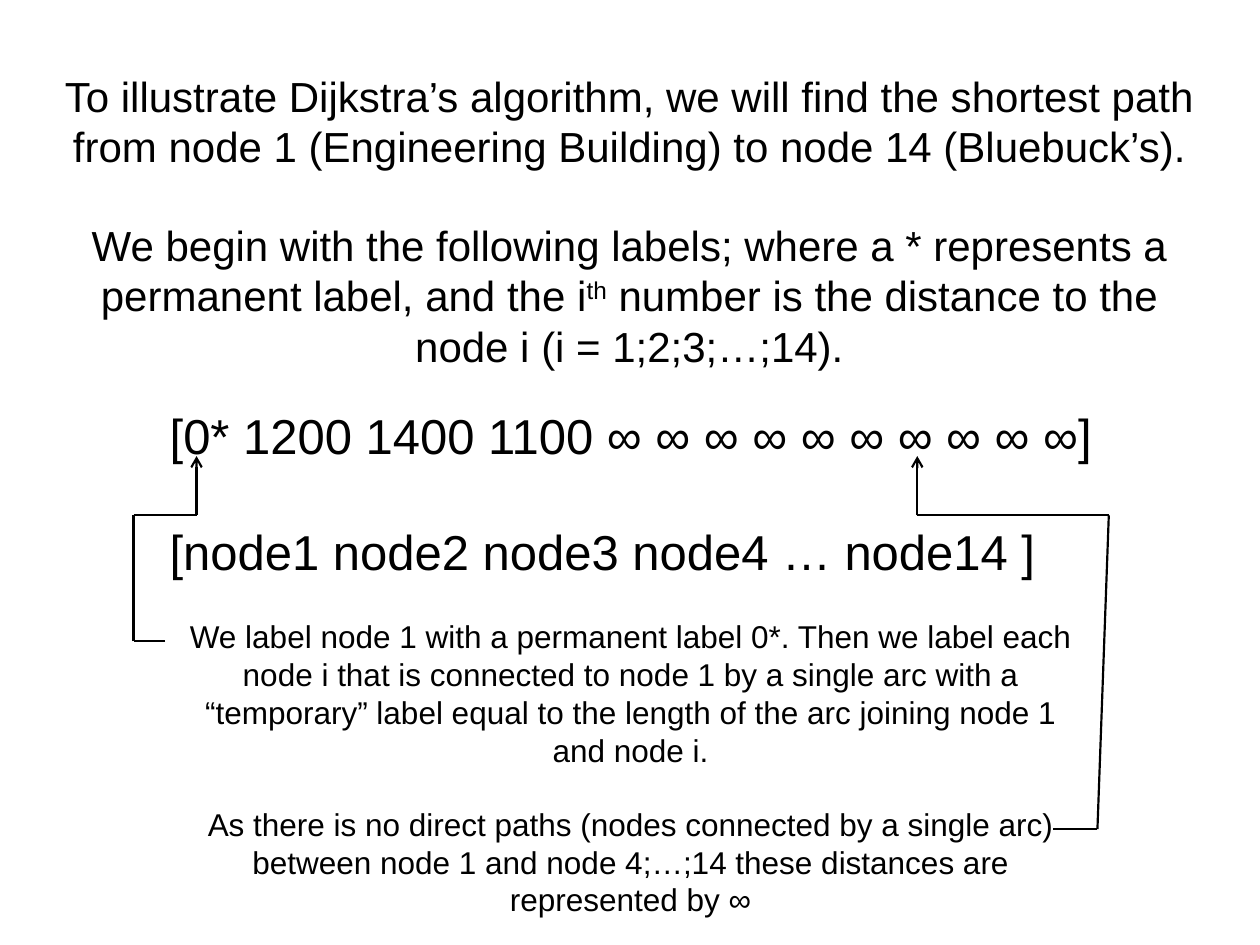
from dataclasses import dataclass
from itertools import pairwise

from lxml.etree import SubElement
from pptx import Presentation
from pptx.dml.color import RGBColor
from pptx.enum.shapes import MSO_CONNECTOR as Connector
from pptx.enum.text import MSO_AUTO_SIZE as AutoSize, PP_ALIGN as Align
from pptx.oxml.ns import qn
from pptx.util import Inches, Pt


@dataclass(frozen=True)
class Theme:
    font: str = "Arial"
    ink: RGBColor = RGBColor(0, 0, 0)
    intro: int = 24
    labels: int = 28
    notes: int = 18
    line_height: float = 1.15
    stroke: float = 1.25


THEME = Theme()
BLANK_LAYOUT = 6

INTRO = [
    "To illustrate Dijkstra’s algorithm, we will find the shortest path "
    "from node 1 (Engineering Building) to node 14 (Bluebuck’s).",
    "We begin with the following labels; where a * represents a permanent "
    "label, and the i^th^ number is the distance to the node i "
    "(i = 1;2;3;…;14).",
]
LABELS = ["[0* 1200 1400 1100 ∞ ∞ ∞ ∞ ∞ ∞ ∞ ∞ ∞ ∞]"]
NODES = ["[node1 node2 node3 node4 … node14 ]"]
NOTES = [
    "We label node 1 with a permanent label 0*. Then we label each node i "
    "that is connected to node 1 by a single arc with a “temporary” label "
    "equal to the length of the arc joining node 1 and node i.",
    "As there is no direct paths (nodes connected by a single arc) between "
    "node 1 and node 4;…;14 these distances are represented by ∞",
]

# Each route runs from a note to the label it explains.
PERMANENT_ROUTE = [(1.31, 5.09), (1.06, 5.09), (1.06, 4.09), (1.56, 4.09), (1.56, 3.62)]
INFINITY_ROUTE = [(8.36, 6.58), (8.71, 6.58), (8.8, 4.09), (7.28, 4.09), (7.28, 3.62)]


def add_text(slide, paragraphs, *, left, top, width, height, size, wrap=True):
    """Add centred paragraphs one line apart; ^marks^ enclose superscripts."""
    box = slide.shapes.add_textbox(
        Inches(left), Inches(top), Inches(width), Inches(height)
    )
    frame = box.text_frame
    frame.word_wrap = wrap
    frame.auto_size = AutoSize.SHAPE_TO_FIT_TEXT
    for index, text in enumerate(paragraphs):
        paragraph = frame.add_paragraph() if index else frame.paragraphs[0]
        paragraph.alignment = Align.CENTER
        if index:
            paragraph.space_before = Pt(size * THEME.line_height)
        for position, part in enumerate(text.split("^")):
            run = paragraph.add_run()
            run.text = part
            run.font.name = THEME.font
            run.font.size = Pt(size)
            run.font.color.rgb = THEME.ink
            if position % 2:
                run.font._element.set("baseline", "30000")


def add_route(slide, points):
    """Group straight lines through the points, with an arrow at the last."""
    group = slide.shapes.add_group_shape()
    for start, end in pairwise(points):
        connector = group.shapes.add_connector(
            Connector.STRAIGHT, *map(Inches, (*start, *end))
        )
        connector.line.color.rgb = THEME.ink
        connector.line.width = Pt(THEME.stroke)
        SubElement(connector._element.spPr, qn("a:effectLst"))
    SubElement(connector.line._get_or_add_ln(), qn("a:tailEnd"), type="arrow")


def main():
    presentation = Presentation()
    presentation.slide_width = Inches(10)
    presentation.slide_height = Inches(7.5)
    slide = presentation.slides.add_slide(presentation.slide_layouts[BLANK_LAYOUT])

    add_text(slide, LABELS, left=1.2, top=3.17, width=7.61, height=0.57,
             size=THEME.labels, wrap=False)
    add_text(slide, INTRO, left=0.35, top=0.51, width=9.29, height=2.52,
             size=THEME.intro)
    add_text(slide, NOTES, left=1.29, top=4.85, width=7.43, height=2.52,
             size=THEME.notes)
    add_text(slide, NODES, left=1.2, top=4.09, width=7.16, height=0.57,
             size=THEME.labels, wrap=False)
    for route in (PERMANENT_ROUTE, INFINITY_ROUTE):
        add_route(slide, route)

    presentation.save("out.pptx")


if __name__ == "__main__":
    main()
